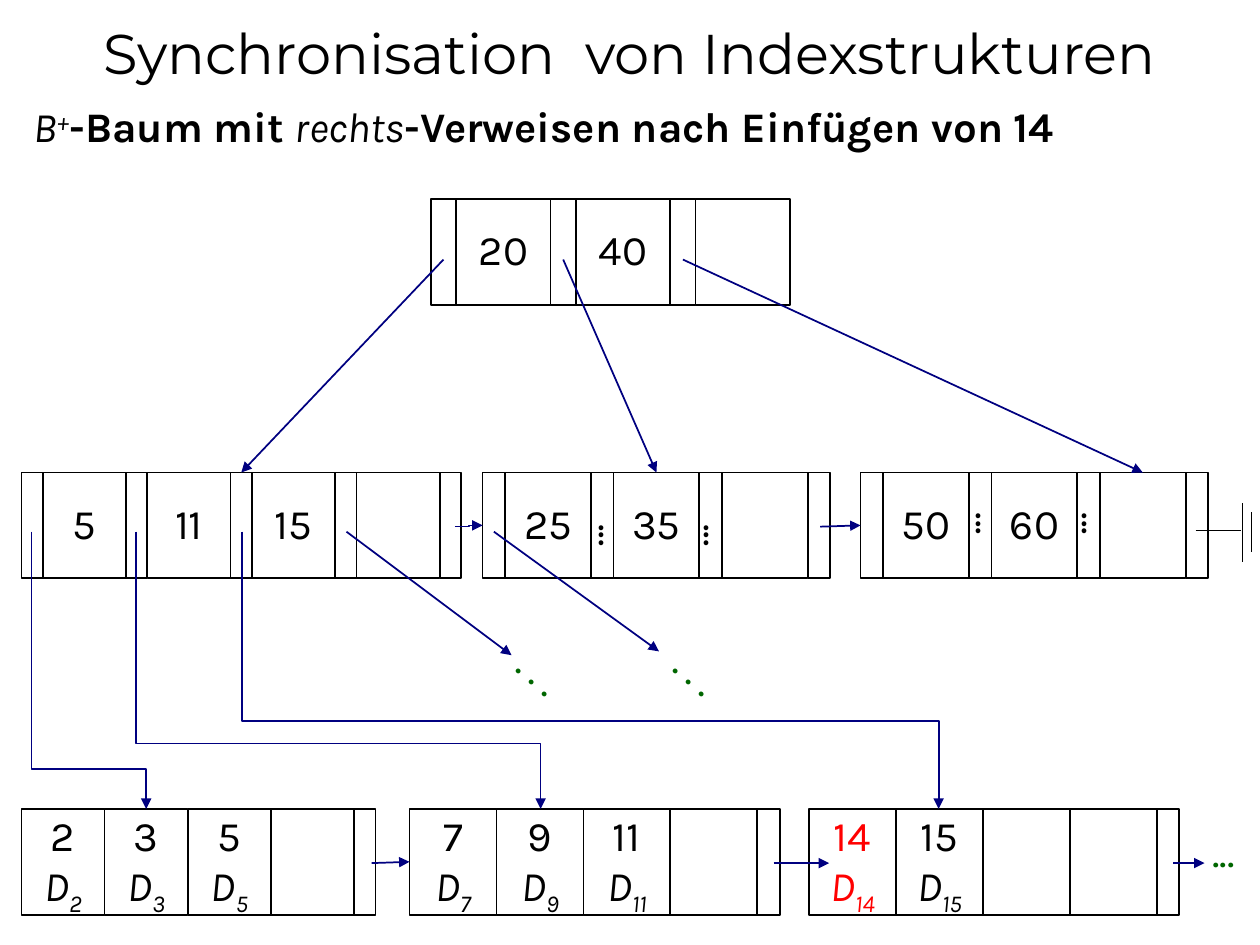
from lxml.etree import SubElement
from pptx import Presentation
from pptx.dml.color import RGBColor
from pptx.enum.shapes import MSO_CONNECTOR, MSO_SHAPE
from pptx.enum.text import MSO_ANCHOR, PP_ALIGN
from pptx.oxml.ns import qn
from pptx.util import Inches, Pt

COLORS = {"black": "000000", "red": "FF0000", "green": "006600", "navy": "000080"}
NODE_HEIGHT = 0.84
INNER_TOP = 3.75
LEAF_TOP = 6.42


def color_of(name):
    return RGBColor.from_string(COLORS[name])


def add_text(paragraph, text, size=24, font="Karla", color="black",
             bold=False, italic=False, baseline=0):
    run = paragraph.add_run()
    run.text = text
    run.font.size = Pt(size)
    run.font.name = font
    run.font.bold = bold
    run.font.italic = italic
    run.font.color.rgb = color_of(color)
    if baseline:
        run._r.get_or_add_rPr().set("baseline", str(baseline * 1000))


def add_title(slide, left, top, width, height):
    title = slide.shapes.title
    title.left, title.top = Inches(left), Inches(top)
    title.width, title.height = Inches(width), Inches(height)
    title.text_frame.vertical_anchor = MSO_ANCHOR.MIDDLE
    paragraph = title.text_frame.paragraphs[0]
    paragraph.alignment = PP_ALIGN.CENTER
    add_text(paragraph, "Synchronisation  von Indexstrukturen", size=32, font="Montserrat")


def add_text_box(slide, left, top, width, height):
    box = slide.shapes.add_textbox(Inches(left), Inches(top), Inches(width), Inches(height))
    box.text_frame.word_wrap = True
    return box


def add_subtitle(slide, left, top, width, height):
    box = add_text_box(slide, left, top, width, height)
    paragraph = box.text_frame.paragraphs[0]
    add_text(paragraph, "B", italic=True)
    add_text(paragraph, "+", italic=True, baseline=30)
    add_text(paragraph, "-Baum mit ", bold=True)
    add_text(paragraph, "rechts", italic=True)
    add_text(paragraph, "-Verweisen nach Einfügen von 14", bold=True)


def add_dots(slide, text, left, top, width, rotation=0, color="green"):
    box = add_text_box(slide, left, top, width, 0.5)
    box.rotation = rotation
    box.text_frame.vertical_anchor = MSO_ANCHOR.MIDDLE
    paragraph = box.text_frame.paragraphs[0]
    paragraph.alignment = PP_ALIGN.CENTER
    add_text(paragraph, text, color=color)


def add_cell(slide, left, top, width):
    cell = slide.shapes.add_shape(MSO_SHAPE.RECTANGLE, Inches(left), Inches(top),
                                  Inches(width), Inches(NODE_HEIGHT))
    cell.shadow.inherit = False
    cell.fill.background()
    cell.line.color.rgb = color_of("black")
    cell.line.width = Pt(1)
    frame = cell.text_frame
    frame.word_wrap = True
    frame.margin_left = frame.margin_right = Inches(0.02)
    frame.vertical_anchor = MSO_ANCHOR.MIDDLE
    return cell


def format_cell_paragraph(paragraph):
    paragraph.alignment = PP_ALIGN.CENTER
    paragraph.line_spacing = 0.9
    return paragraph


def add_inner_node(slide, left, top, keys, pointer_width, key_width, last_pointer=True):
    pointers, key_cells = [], []
    step = pointer_width + key_width
    for index, key in enumerate(keys):
        pointers.append(add_cell(slide, left + index * step, top, pointer_width))
        cell = add_cell(slide, left + index * step + pointer_width, top, key_width)
        key_cells.append(cell)
        if key:
            add_text(format_cell_paragraph(cell.text_frame.paragraphs[0]), key)
    if last_pointer:
        pointers.append(add_cell(slide, left + len(keys) * step, top, pointer_width))
    return pointers, key_cells


def add_leaf(slide, left, top, keys, key_width, pointer_width, new_key=None):
    cells = []
    for index in range(4):
        cell = add_cell(slide, left + index * key_width, top, key_width)
        cells.append(cell)
        if index < len(keys):
            key = keys[index]
            color = "red" if key == new_key else "black"
            frame = cell.text_frame
            frame.vertical_anchor = MSO_ANCHOR.TOP
            add_text(format_cell_paragraph(frame.paragraphs[0]), key, color=color)
            record = format_cell_paragraph(frame.add_paragraph())
            add_text(record, "D", color=color, italic=True)
            add_text(record, key, color=color, italic=True, baseline=-25)
    add_cell(slide, left + 4 * key_width, top, pointer_width)
    return cells


def add_line(slide, begin, end, kind=MSO_CONNECTOR.STRAIGHT, color="navy", width=1, arrow=True):
    line = slide.shapes.add_connector(kind, *(Inches(value) for value in (*begin, *end)))
    line.line.color.rgb = color_of(color)
    line.line.width = Pt(width)
    if arrow:
        SubElement(line.line._get_or_add_ln(), qn("a:tailEnd"), type="triangle")
    SubElement(line._element.spPr, qn("a:effectLst"))
    return line


def add_down_elbow(slide, begin, end, bend_y):
    drop, run = end[1] - begin[1], end[0] - begin[0]
    center_x, center_y = (begin[0] + end[0]) / 2, (begin[1] + end[1]) / 2
    left, top = center_x - drop / 2, center_y - run / 2
    elbow = add_line(slide, (left + drop, top), (left, top + run), MSO_CONNECTOR.ELBOW)
    properties = elbow._element.spPr
    properties.find(qn("a:xfrm")).set("rot", str(270 * 60000))
    adjustments = properties.find(qn("a:prstGeom")).find(qn("a:avLst"))
    ratio = round((bend_y - begin[1]) / drop * 100000)
    SubElement(adjustments, qn("a:gd"), name="adj1", fmla=f"val {ratio}")


def add_end_mark(slide, left, middle):
    for begin, end in (((left, middle), (left + 0.36, middle)),
                       ((left + 0.37, middle + 0.25), (left + 0.37, middle - 0.22)),
                       ((left + 0.44, middle + 0.17), (left + 0.44, middle - 0.15))):
        add_line(slide, begin, end, color="black", width=0.75, arrow=False)


def add_root_level(slide, left, top, targets):
    add_inner_node(slide, left, top, ["20", "40", ""], 0.2, 0.75, last_pointer=False)
    for index, (target, end) in enumerate(targets):
        begin = (left + 0.1 + index * 0.95, top + 0.48)
        add_line(slide, begin, end).end_connect(target, 0)


def add_inner_level(slide, top):
    first_pointers, _ = add_inner_node(slide, 0.17, top, ["5", "11", "15", ""], 0.17, 0.66)
    second_pointers, second_keys = add_inner_node(slide, 3.83, top, ["25", "35", ""], 0.18, 0.68)
    third_pointers, third_keys = add_inner_node(slide, 6.83, top, ["50", "60", ""], 0.18, 0.68)
    for left, offset in ((4.56, 0.25), (5.39, 0.25), (7.55, 0.16), (8.39, 0.16)):
        add_dots(slide, "...", left, top + offset, 0.67, rotation=90, color="black")
    for begin_x, end_x, target, kind in (
            (3.61, 3.83, second_pointers[0], MSO_CONNECTOR.ELBOW),
            (6.51, 6.83, third_pointers[0], MSO_CONNECTOR.STRAIGHT)):
        link = add_line(slide, (begin_x, top + 0.43), (end_x, top + 0.42), kind)
        link.end_connect(target, 1)
    add_end_mark(slide, 9.49, top + 0.46)
    for begin_x, end, dots_left in ((2.75, (4.06, 5.2), 3.92), (3.92, (5.23, 5.17), 5.17)):
        add_line(slide, (begin_x, top + 0.47), end)
        add_dots(slide, ". . .", dots_left, 5.08, 0.75, rotation=41.1)
    return ((first_pointers[2], (1.92, top)), (second_keys[1], (5.2, top)),
            (third_keys[2], (9.07, top)))


def add_leaf_level(slide, top):
    add_leaf(slide, 0.17, top, ["2", "3", "5"], 0.66, 0.17)
    second = add_leaf(slide, 3.25, top, ["7", "9", "11"], 0.69, 0.18)
    add_leaf(slide, 6.42, top, ["14", "15"], 0.69, 0.18, new_key="14")
    middle = top + 0.43
    add_line(slide, (2.95, middle), (3.25, middle)).end_connect(second[0], 1)
    add_line(slide, (6.14, middle), (6.58, middle))
    add_line(slide, (9.31, middle), (9.56, middle))
    add_dots(slide, "...", 9.42, top + 0.08, 0.58)
    for begin_x, end_x, bend_y in ((0.25, 1.16, 6.1), (1.08, 4.29, 5.9), (1.92, 7.45, 5.72)):
        add_down_elbow(slide, (begin_x, INNER_TOP + 0.47), (end_x, top), bend_y)


def main():
    presentation = Presentation()
    presentation.slide_width, presentation.slide_height = Inches(10), Inches(7.5)
    slide = presentation.slides.add_slide(presentation.slide_layouts[5])
    add_title(slide, 0, 0, 10, 0.83)
    add_subtitle(slide, 0.17, 0.75, 9.83, 0.5)
    targets = add_inner_level(slide, INNER_TOP)
    add_root_level(slide, 3.42, 1.58, targets)
    add_leaf_level(slide, LEAF_TOP)
    presentation.save("out.pptx")


if __name__ == "__main__":
    main()
